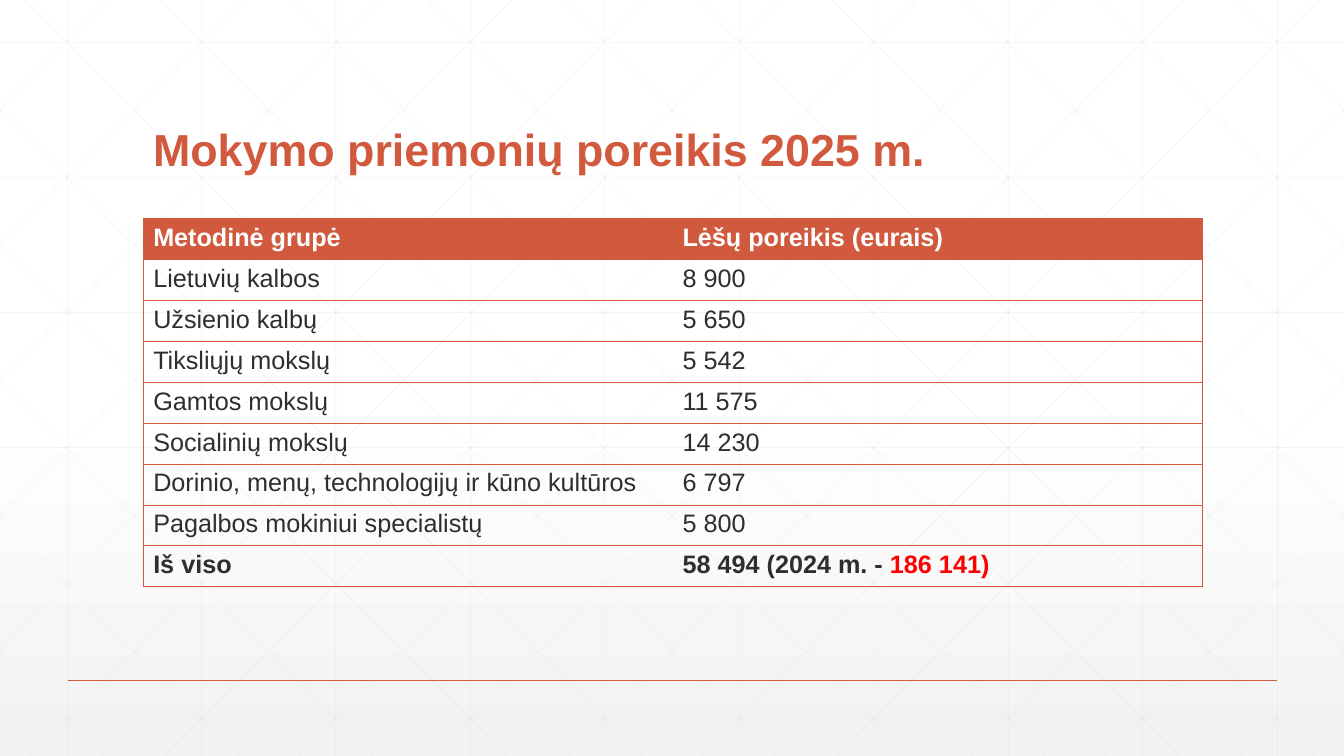
from dataclasses import dataclass

from lxml.etree import SubElement
from pptx import Presentation
from pptx.dml.color import RGBColor
from pptx.enum.shapes import MSO_CONNECTOR
from pptx.enum.text import MSO_ANCHOR
from pptx.oxml import parse_xml
from pptx.oxml.ns import nsdecls, qn
from pptx.slide import Slide
from pptx.table import _Cell as Cell
from pptx.text.text import _Paragraph as Paragraph
from pptx.util import Emu, Pt

EMU_PER_PX = 9144
SLIDE_WIDTH, SLIDE_HEIGHT = 1333, 750
GRID_STEP = 400 / 3
DIAGONAL_RUN = 745
NO_TABLE_STYLE = "{2D5ABB26-0587-4C30-8999-92F81FD0307C}"


@dataclass(frozen=True)
class Theme:
    font: str = "Arial"
    accent: str = "D15A3E"
    text: str = "2D2E2D"
    alert: str = "FF0000"
    white: str = "FFFFFF"
    shade: str = "F2F2F2"
    grid: str = "D9D9D9"
    title_size: int = 32
    table_size: int = 18


THEME = Theme()


@dataclass(frozen=True)
class Line:
    x1: int
    y1: int
    x2: int
    y2: int
    color: str = THEME.grid
    width: float = 0.5
    opacity: int = 25


@dataclass(frozen=True)
class Need:
    group: str
    amount: str
    highlight: str = ""


HEADER = Need("Metodinė grupė", "Lėšų poreikis (eurais)")
NEEDS = [
    Need("Lietuvių kalbos", "8 900"),
    Need("Užsienio kalbų", "5 650"),
    Need("Tiksliųjų mokslų", "5 542"),
    Need("Gamtos mokslų", "11 575"),
    Need("Socialinių mokslų", "14 230"),
    Need("Dorinio, menų, technologijų ir kūno kultūros", "6 797"),
    Need("Pagalbos mokiniui specialistų", "5 800"),
]
TOTAL = Need("Iš viso", "58 494 (2024 m. - ", "186 141)")


def px(value: int) -> Emu:
    return Emu(value * EMU_PER_PX)


def add_text(paragraph: Paragraph, text: str, *, size: int = THEME.table_size,
             color: str = THEME.text, bold: bool = False) -> None:
    run = paragraph.add_run()
    run.text = text
    run.font.name = THEME.font
    run.font.size = Pt(size)
    run.font.bold = bold
    run.font.color.rgb = RGBColor.from_string(color)


def set_background(slide: Slide) -> None:
    fill = slide.background.fill
    fill.gradient()
    gradient = slide.background._cSld.bg.bgPr.find(qn("a:gradFill"))
    for child in list(gradient):
        gradient.remove(child)
    stops = SubElement(gradient, qn("a:gsLst"))
    for position, color in ((0, THEME.white), (53, THEME.white), (100, THEME.shade)):
        stop = SubElement(stops, qn("a:gs"), pos=str(position * 1000))
        SubElement(stop, qn("a:srgbClr"), val=color)
    SubElement(gradient, qn("a:lin"), ang="5400000", scaled="0")


def draw_line(slide: Slide, line: Line) -> None:
    connector = slide.shapes.add_connector(
        MSO_CONNECTOR.STRAIGHT, px(line.x1), px(line.y1), px(line.x2), px(line.y2))
    connector.line.color.rgb = RGBColor.from_string(line.color)
    connector.line.width = Pt(line.width)
    properties = connector._element.spPr
    if line.opacity < 100:
        color = properties.find(".//" + qn("a:srgbClr"))
        SubElement(color, qn("a:alpha"), val=str(line.opacity * 1000))
    SubElement(properties, qn("a:effectLst"))


def grid_lines() -> list[Line]:
    columns = [round(GRID_STEP * (index + 0.5)) for index in range(10)]
    lines = [Line(x, 0, x, SLIDE_HEIGHT) for x in columns]
    lines += [Line(0, y, SLIDE_WIDTH, y) for y in range(42, SLIDE_HEIGHT, 134)]
    slope = SLIDE_HEIGHT / DIAGONAL_RUN
    for index in range(-5, 10):
        origin = 25 + GRID_STEP * index
        left = max(0, origin)
        right = min(SLIDE_WIDTH, origin + DIAGONAL_RUN)
        x1, x2 = round(left), round(right)
        y1, y2 = round((left - origin) * slope), round((right - origin) * slope)
        lines.append(Line(x1, y1, x2, y2))
        lines.append(Line(SLIDE_WIDTH - x1, y1, SLIDE_WIDTH - x2, y2))
    return lines


def set_borders(cell: Cell, hidden_side: str) -> None:
    properties = cell._tc.get_or_add_tcPr()
    for index, side in enumerate(("lnL", "lnR", "lnT", "lnB")):
        paint = ("<a:noFill/>" if side == hidden_side else
                 f'<a:solidFill><a:srgbClr val="{THEME.accent}"/></a:solidFill>')
        border = parse_xml(f'<a:{side} {nsdecls("a")} w="6350">{paint}</a:{side}>')
        properties.insert(index, border)


def fill_row(cells: list[Cell], need: Need) -> None:
    is_header = need == HEADER
    color = THEME.white if is_header else THEME.text
    bold = need in (HEADER, TOTAL)
    for cell, text, inner_side in zip(cells, (need.group, need.amount), ("lnR", "lnL")):
        add_text(cell.text_frame.paragraphs[0], text, color=color, bold=bold)
        if is_header:
            cell.fill.solid()
            cell.fill.fore_color.rgb = RGBColor.from_string(THEME.accent)
        else:
            cell.fill.background()
        set_borders(cell, inner_side)
    if need.highlight:
        add_text(cells[1].text_frame.paragraphs[0], need.highlight,
                 color=THEME.alert, bold=bold)


def draw_title(slide: Slide) -> None:
    title = slide.shapes.add_textbox(px(142), px(55), px(1050), px(125))
    frame = title.text_frame
    frame.word_wrap = True
    frame.vertical_anchor = MSO_ANCHOR.BOTTOM
    frame.paragraphs[0].line_spacing = 0.9
    add_text(frame.paragraphs[0], "Mokymo priemonių poreikis 2025 m.",
             size=THEME.title_size, color=THEME.accent, bold=True)


def draw_table(slide: Slide) -> None:
    needs = [HEADER, *NEEDS, TOTAL]
    table = slide.shapes.add_table(
        len(needs), 2, px(142), px(217), px(1050), px(365)).table
    table.first_row = True
    table.horz_banding = False
    table._tbl.tblPr.find(qn("a:tableStyleId")).text = NO_TABLE_STYLE
    for row, need in zip(table.rows, needs):
        fill_row(list(row.cells), need)


def main() -> None:
    presentation = Presentation()
    presentation.slide_width = px(SLIDE_WIDTH)
    presentation.slide_height = px(SLIDE_HEIGHT)
    slide = presentation.slides.add_slide(presentation.slide_layouts[6])
    set_background(slide)
    for line in grid_lines():
        draw_line(slide, line)
    draw_line(slide, Line(67, 675, 1267, 675, THEME.accent, 1, 100))
    draw_title(slide)
    draw_table(slide)
    presentation.save("out.pptx")


if __name__ == "__main__":
    main()
